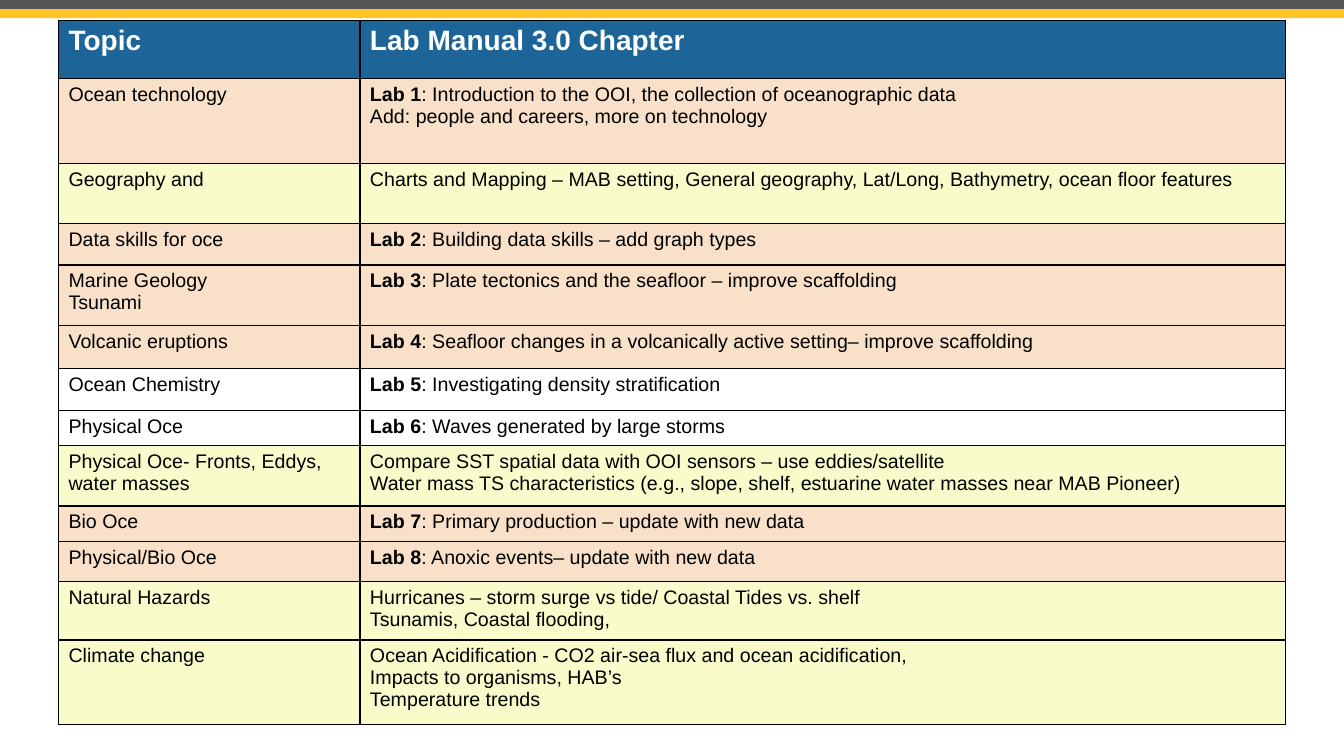
from pptx import Presentation
from pptx.util import Inches, Pt
from pptx.dml.color import RGBColor
from pptx.enum import shapes
from pptx.oxml import parse_xml
from pptx.oxml import ns

BLUE, PEACH, LEMON, WHITE = "1D6498", "F8E1C8", "FAFBCB", "FFFFFF"
HEAD = {"name": "Arial", "size": Pt(20), "bold": True}
BODY = {"name": "Arial", "size": Pt(14), "bold": False}
COLS = [2.99, 9.18]
ROWS = [
    (0.58, BLUE, "Topic", "Lab Manual 3.0 Chapter"),
    (0.84, PEACH, "Ocean technology",
     "Lab 1: Introduction to the OOI, the collection of oceanographic data\n"
     "Add: people and careers, more on technology"),
    (0.6, LEMON, "Geography and",
     "Charts and Mapping – MAB setting, General geography, Lat/Long, "
     "Bathymetry, ocean floor features"),
    (0.41, PEACH, "Data skills for oce",
     "Lab 2: Building data skills – add graph types"),
    (0.6, PEACH, "Marine Geology\nTsunami",
     "Lab 3: Plate tectonics and the seafloor – improve scaffolding"),
    (0.43, PEACH, "Volcanic eruptions",
     "Lab 4: Seafloor changes in a volcanically active setting– improve scaffolding"),
    (0.41, WHITE, "Ocean Chemistry", "Lab 5: Investigating density stratification"),
    (0.35, WHITE, "Physical Oce", "Lab 6: Waves generated by large storms"),
    (0.6, LEMON, "Physical Oce- Fronts, Eddys, water masses",
     "Compare SST spatial data with OOI sensors – use eddies/satellite\n"
     "Water mass TS characteristics (e.g., slope, shelf, estuarine water masses "
     "near MAB Pioneer)"),
    (0.35, PEACH, "Bio Oce", "Lab 7: Primary production – update with new data"),
    (0.4, PEACH, "Physical/Bio Oce", "Lab 8: Anoxic events– update with new data"),
    (0.58, LEMON, "Natural Hazards",
     "Hurricanes – storm surge vs tide/ Coastal Tides vs. shelf\n"
     "Tsunamis, Coastal flooding,"),
    (0.84, LEMON, "Climate change",
     "Ocean Acidification - CO2 air-sea flux and ocean acidification,\n"
     "Impacts to organisms, HAB’s\nTemperature trends"),
]


def paint(fill, color):
    fill.solid()
    fill.fore_color.rgb = RGBColor.from_string(color)


def add_band(slide, top, color):
    band = slide.shapes.add_shape(shapes.MSO_SHAPE.RECTANGLE, 0, Inches(top),
                                  Inches(13.33), Inches(0.09))
    band.shadow.inherit = False
    paint(band.fill, color)
    band.line.fill.background()


def add_run(para, words, style, color):
    run = para.add_run()
    run.text = words
    for key, value in style.items():
        setattr(run.font, key, value)
    run.font.color.rgb = RGBColor.from_string(color)


def add_edges(cell):
    props = cell._tc.get_or_add_tcPr()
    for place, side in enumerate(("lnL", "lnR", "lnT", "lnB")):
        props.insert(place, parse_xml(
            f'<a:{side} {ns.nsdecls("a")} w="12700"><a:solidFill>'
            f'<a:srgbClr val="000000"/></a:solidFill></a:{side}>'))


def fill_cell(cell, words, color, style, ink):
    paint(cell.fill, color)
    add_edges(cell)
    frame = cell.text_frame
    for index, line in enumerate(words.split("\n")):
        para = frame.add_paragraph() if index else frame.paragraphs[0]
        label, colon, rest = line.partition(":")
        if colon and label.startswith("Lab "):
            add_run(para, label, {**style, "bold": True}, ink)
            line = colon + rest
        add_run(para, line, style, ink)


def add_grid(slide):
    grid = slide.shapes.add_table(
        len(ROWS), len(COLS), Inches(0.58), Inches(0.2), Inches(sum(COLS)),
        Inches(sum(row[0] for row in ROWS))).table
    grid.horz_banding = False
    for col, width in zip(grid.columns, COLS):
        col.width = Inches(width)
    for index, (height, color, *texts) in enumerate(ROWS):
        grid.rows[index].height = Inches(height)
        style, ink = (BODY, "000000") if index else (HEAD, WHITE)
        for spot, words in enumerate(texts):
            fill_cell(grid.cell(index, spot), words, color, style, ink)


def main():
    deck = Presentation()
    deck.slide_width, deck.slide_height = Inches(13.33), Inches(7.5)
    slide = deck.slides.add_slide(deck.slide_layouts[6])
    for top, color in ((0, "565656"), (0.09, "FFC425")):
        add_band(slide, top, color)
    add_grid(slide)
    deck.save("out.pptx")


if __name__ == "__main__":
    main()
